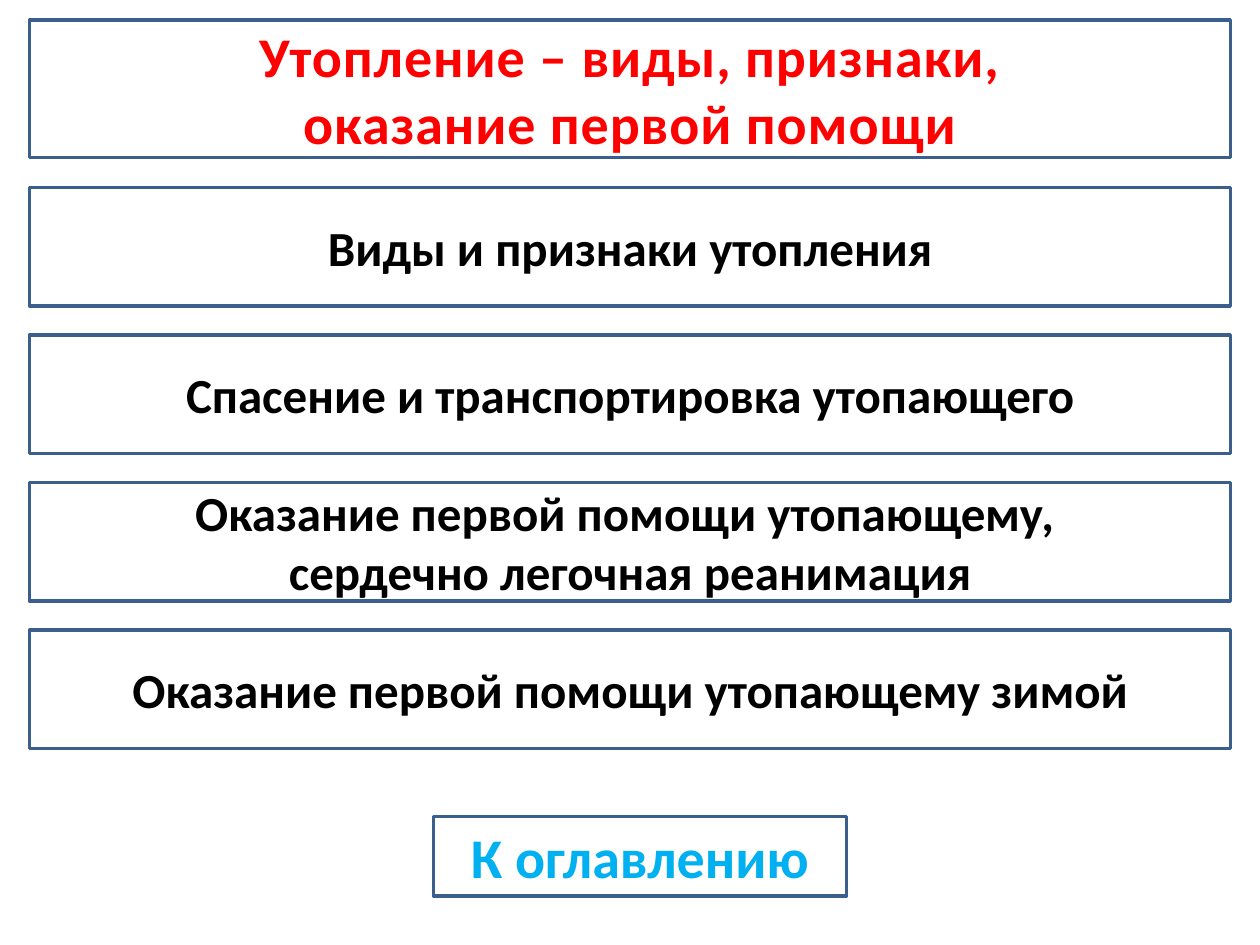
from pptx import Presentation
from pptx.dml.color import RGBColor
from pptx.enum.shapes import MSO_SHAPE
from pptx.enum.text import MSO_ANCHOR, MSO_AUTO_SIZE, PP_ALIGN
from pptx.util import Inches, Pt

RECTANGLE = MSO_SHAPE.RECTANGLE
MIDDLE = MSO_ANCHOR.MIDDLE
NO_AUTOFIT = MSO_AUTO_SIZE.NONE
CENTER = PP_ALIGN.CENTER

RED = RGBColor(0xFF, 0x00, 0x00)
BLACK = RGBColor(0x00, 0x00, 0x00)
SKY = RGBColor(0x00, 0xB0, 0xF0)
WHITE = RGBColor(0xFF, 0xFF, 0xFF)
BORDER = RGBColor(0x3A, 0x5F, 0x8C)

PAGE_WIDTH, PAGE_HEIGHT = 10, 7.5
WIDTH = 9.53
LEFT = (PAGE_WIDTH - WIDTH) / 2
TOPIC_HEIGHT, TOPIC_GAP = 0.94, 0.23
TITLE = "Утопление – виды, признаки,\vоказание первой помощи"
TOPICS = [
    "Виды и признаки утопления",
    "Спасение и транспортировка утопающего",
    "Оказание первой помощи утопающему, \vсердечно легочная реанимация",
    "Оказание первой помощи утопающему зимой",
]


def format_box(box, text, size, color):
    box.line.color.rgb = BORDER
    box.line.width = Pt(2)
    frame = box.text_frame
    frame.word_wrap = True
    frame.auto_size = NO_AUTOFIT
    frame.vertical_anchor = MIDDLE
    para = frame.paragraphs[0]
    para.text = text
    para.alignment = CENTER
    para.font.name = "Calibri"
    para.font.size = Pt(size)
    para.font.bold = True
    para.font.color.rgb = color


def add_title(page, left, top, width, height):
    title = page.shapes.title
    title.left, title.top = Inches(left), Inches(top)
    title.width, title.height = Inches(width), Inches(height)
    format_box(title, TITLE, 32, RED)
    for span in title.text_frame.paragraphs[0].runs:
        span._r.get_or_add_rPr().set("spc", "50")


def add_button(page, left, top, width, height, text, size, color):
    button = page.shapes.add_shape(
        RECTANGLE, Inches(left), Inches(top), Inches(width), Inches(height))
    button.shadow.inherit = False
    button.fill.background()
    format_box(button, text, size, color)
    return button


def add_topics(page, left, top, width):
    for index, topic in enumerate(TOPICS):
        row_top = top + index * (TOPIC_HEIGHT + TOPIC_GAP)
        add_button(page, left, row_top, width, TOPIC_HEIGHT, topic, 28, BLACK)


def add_contents_button(page, left, top, width, height):
    button = add_button(page, left, top, width, height, "К оглавлению", 32, SKY)
    button.fill.solid()
    button.fill.fore_color.rgb = WHITE


def main():
    deck = Presentation()
    deck.slide_width, deck.slide_height = Inches(PAGE_WIDTH), Inches(PAGE_HEIGHT)
    page = deck.slides.add_slide(deck.slide_layouts.get_by_name("Title Only"))
    add_title(page, LEFT, 0.16, WIDTH, 1.09)
    add_topics(page, LEFT, 1.49, WIDTH)
    add_contents_button(page, 3.44, 6.48, 3.28, 0.63)
    deck.save("out.pptx")


if __name__ == "__main__":
    main()
